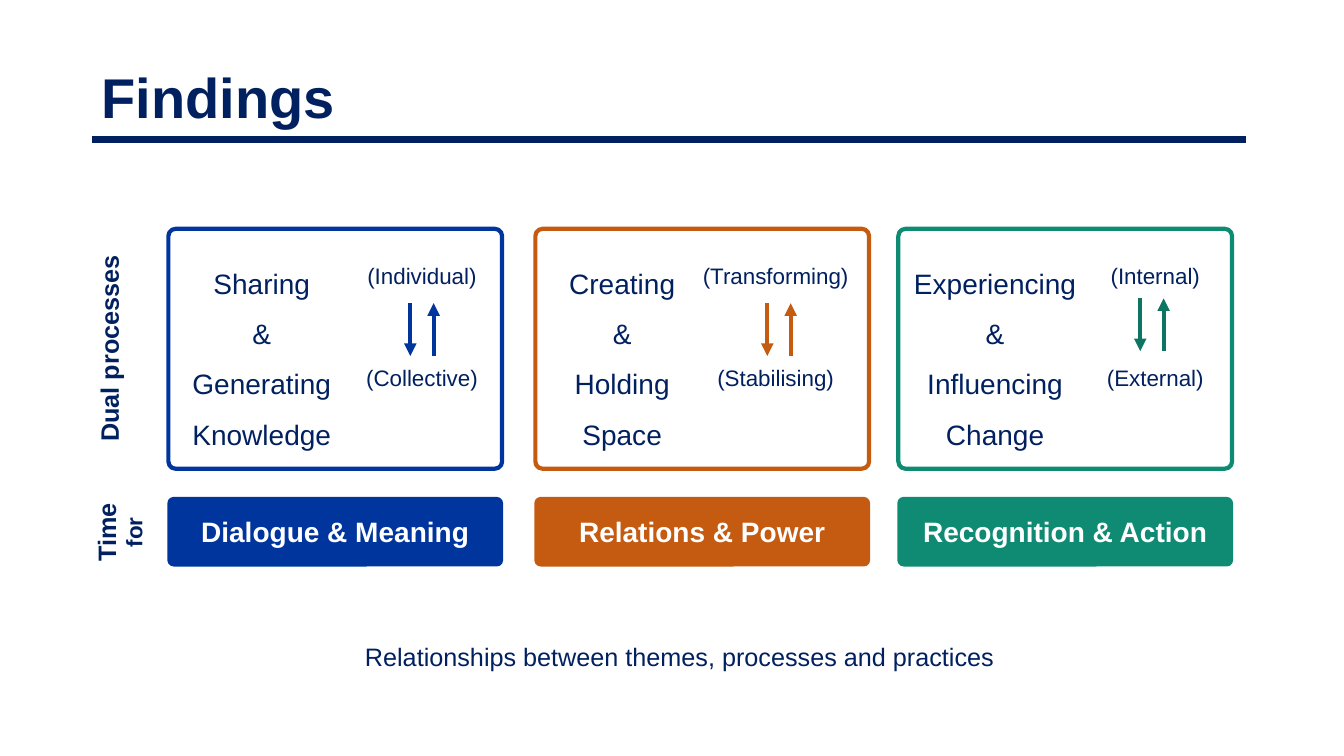
from collections import namedtuple

from lxml.etree import SubElement
from pptx import Presentation
from pptx.dml.color import RGBColor
from pptx.enum.shapes import MSO_CONNECTOR, MSO_SHAPE
from pptx.enum.text import MSO_ANCHOR, MSO_AUTO_SIZE, PP_ALIGN
from pptx.oxml.ns import qn
from pptx.util import Inches, Pt

NAVY = RGBColor(0x00, 0x20, 0x60)
BLUE = RGBColor(0x00, 0x35, 0x9E)
RUST = RGBColor(0xC5, 0x5A, 0x11)
GREEN = RGBColor(0x0F, 0x8B, 0x73)
PINE = RGBColor(0x0D, 0x75, 0x61)
WHITE = RGBColor(0xFF, 0xFF, 0xFF)
FONT = "Arial"

Box = namedtuple("Box", "x y w h")
# mid, span, poles and pair are shares of the card width; level of its height
Theme = namedtuple("Theme", "left color dark name label ends mid span poles pair level")

THEMES = [
    Theme(1.67, BLUE, BLUE, "Sharing\n&\nGenerating Knowledge", "Dialogue & Meaning",
          ("(Individual)", "(Collective)"), 0.28, 0.5, 0.76, 0.76, 0.42),
    Theme(5.31, RUST, RUST, "Creating\n&\nHolding Space", "Relations & Power",
          ("(Transforming)", "(Stabilising)"), 0.26, 0.44, 0.72, 0.73, 0.42),
    Theme(8.91, GREEN, PINE, "Experiencing\n&\nInfluencing Change", "Recognition & Action",
          ("(Internal)", "(External)"), 0.29, 0.58, 0.77, 0.76, 0.4),
]
CARD_W = 3.31
CARD_Y, CARD_H = 2.27, 2.38
BAND_Y, BAND_H = 4.94, 0.67


def inches(box):
    return [Inches(side) for side in box]


def write(frame, text, size, color=NAVY, bold=False, align=PP_ALIGN.CENTER, space=None):
    frame.text = text
    frame.word_wrap = True
    for para in frame.paragraphs:
        para.alignment = align
        para.line_spacing = space
        for run in para.runs:
            font = run.font
            font.name, font.size, font.bold = FONT, Pt(size), bold
            font.color.rgb = color


def add_text(slide, box, text, size, **style):
    shape = slide.shapes.add_textbox(*inches(box))
    write(shape.text_frame, text, size, **style)
    return shape


def add_line(slide, start, end, color, width, arrow=False):
    line = slide.shapes.add_connector(MSO_CONNECTOR.STRAIGHT, *inches(start + end))
    line.line.color.rgb = color
    line.line.width = Pt(width)
    if arrow:
        SubElement(line.line._get_or_add_ln(), qn("a:tailEnd"), type="triangle")
    SubElement(line._element.spPr, qn("a:effectLst"))


def add_panel(slide, box, color, width, curve):
    panel = slide.shapes.add_shape(MSO_SHAPE.ROUNDED_RECTANGLE, *inches(box))
    panel.adjustments[0] = curve
    panel.shadow.inherit = False
    panel.line.color.rgb = color
    panel.line.width = Pt(width)
    panel.fill.background()
    return panel


def add_card(slide, box, theme):
    """Outlined card: the paired process, its two poles and the arrows between."""
    add_panel(slide, box, theme.color, 3, 0.03)
    span = theme.span * box.w
    name = Box(box.x + theme.mid * box.w - span / 2, box.y + 0.065 * box.h, span, 0.87 * box.h)
    add_text(slide, name, theme.name, 20, space=1.5)

    width = 0.52 * box.w
    left = box.x + theme.poles * box.w - width / 2
    for text, share in zip(theme.ends, (0.12, 0.545)):
        add_text(slide, Box(left, box.y + share * box.h, width, 0.37), text, 16)

    mid, gap = box.x + theme.pair * box.w, 0.035 * box.w
    high = box.y + (theme.level - 0.11) * box.h
    low = box.y + (theme.level + 0.11) * box.h
    add_line(slide, (mid - gap, high), (mid - gap, low), theme.dark, 3, True)
    add_line(slide, (mid + gap, low), (mid + gap, high), theme.dark, 3, True)


def add_band(slide, box, theme):
    band = add_panel(slide, box, theme.color, 1.5, 0.08)
    band.fill.solid()
    band.fill.fore_color.rgb = theme.color
    frame = band.text_frame
    frame.vertical_anchor = MSO_ANCHOR.MIDDLE
    write(frame, theme.label, 20, color=WHITE, bold=True)


def add_head(slide, box):
    title = slide.shapes.title
    title.left, title.top, title.width, title.height = inches(box)
    frame = title.text_frame
    write(frame, "Findings", 40, bold=True, align=PP_ALIGN.LEFT)
    frame.auto_size = MSO_AUTO_SIZE.NONE
    frame.vertical_anchor = MSO_ANCHOR.TOP
    rule = box.y + box.h + 0.04
    add_line(slide, (box.x, rule), (box.x + 11.45, rule), NAVY, 5)


def add_sides(slide):
    """Row labels, turned to read upwards."""
    dual = add_text(slide, Box(0.05, 3.25, 2.06, 0.4), "Dual processes", 18,
                    bold=True, align=PP_ALIGN.LEFT)
    time = add_text(slide, Box(0.8, 4.96, 0.79, 0.64), "Time\nfor", 18, bold=True, space=0.95)
    time.text_frame.word_wrap = False
    time.text_frame.paragraphs[1].runs[0].font.size = Pt(16)
    for label in (dual, time):
        label.rotation = 270


def main():
    deck = Presentation()
    deck.slide_width, deck.slide_height = Inches(13.33), Inches(7.5)
    slide = deck.slides.add_slide(deck.slide_layouts[5])
    add_head(slide, Box(0.91, 0.57, 6.26, 0.77))
    add_sides(slide)
    for theme in THEMES:
        add_card(slide, Box(theme.left, CARD_Y, CARD_W, CARD_H), theme)
        add_band(slide, Box(theme.left, BAND_Y, CARD_W, BAND_H), theme)
    add_text(slide, Box(2.21, 6.31, 9.06, 0.4),
             "Relationships between themes, processes and practices", 18)
    deck.save("out.pptx")


if __name__ == "__main__":
    main()
